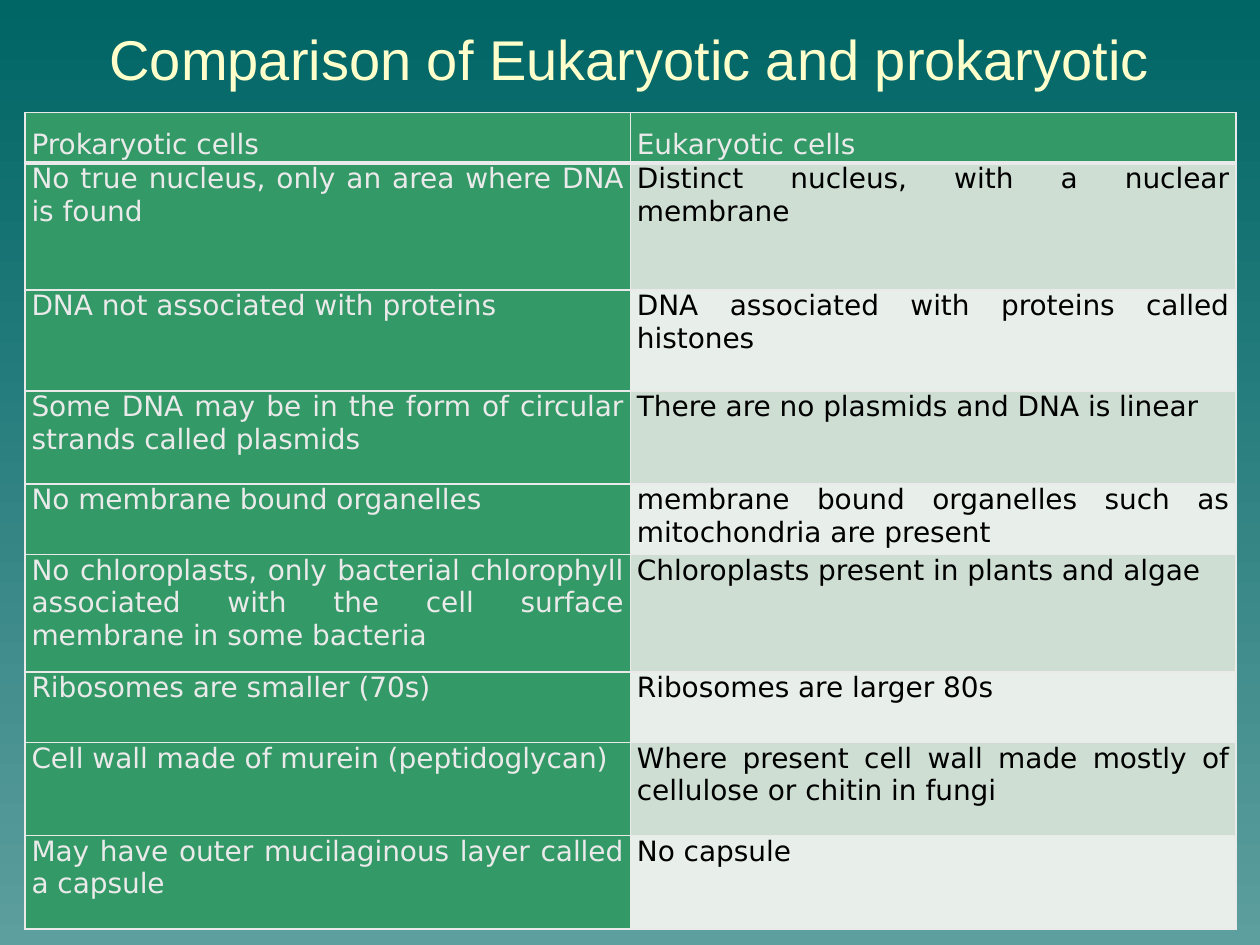
from dataclasses import dataclass

from lxml import etree
from pptx import Presentation
from pptx.dml.color import RGBColor
from pptx.enum import text
from pptx.oxml.ns import qn
from pptx.util import Emu, Inches, Pt

SLIDE_WIDTH, SLIDE_HEIGHT = Inches(10), Inches(7.5)
TITLE_ONLY = 5

TEAL_DARK = RGBColor(0x00, 0x65, 0x65)
TEAL_LIGHT = RGBColor(0x5D, 0x9E, 0x9E)
CREAM = RGBColor(0xFF, 0xFF, 0xCC)
GREEN = RGBColor(0x33, 0x99, 0x66)
BAND_DARK = RGBColor(0xCE, 0xDE, 0xD3)
BAND_LIGHT = RGBColor(0xE8, 0xEF, 0xEA)
PALE = RGBColor(0xEA, 0xEA, 0xEA)
BLACK = RGBColor(0x00, 0x00, 0x00)

HEADER_FONT = {"name": "DejaVu Sans", "size": Pt(16), "bold": False}
TITLE_FONT = {"name": "Arial", "size": Pt(32), "bold": False}


@dataclass
class Comparison:
    prokaryotic: str
    eukaryotic: str
    height: float  # inches


COMPARISONS = [
    Comparison("Prokaryotic cells", "Eukaryotic cells", 0.4),
    Comparison("No true nucleus, only an area where DNA is found",
               "Distinct nucleus, with a nuclear membrane", 1.01),
    Comparison("DNA not associated with proteins",
               "DNA associated with proteins called histones", 0.8),
    Comparison("Some DNA may be in the form of circular strands called plasmids",
               "There are no plasmids and DNA is linear", 0.74),
    Comparison("No membrane bound organelles",
               "membrane bound organelles such as mitochondria are present", 0.56),
    Comparison("No chloroplasts, only bacterial chlorophyll associated with the "
               "cell surface membrane in some bacteria",
               "Chloroplasts present in plants and algae", 0.93),
    Comparison("Ribosomes are smaller (70s)", "Ribosomes are larger 80s", 0.56),
    Comparison("Cell wall made of murein (peptidoglycan)",
               "Where present cell wall made mostly of cellulose or chitin in fungi", 0.74),
    Comparison("May have outer mucilaginous layer called a capsule", "No capsule", 0.74),
]


def across(share: float) -> Emu:
    return Emu(int(SLIDE_WIDTH * share))


def down(share: float) -> Emu:
    return Emu(int(SLIDE_HEIGHT * share))


def apply(target, values: dict) -> None:
    for name, value in values.items():
        setattr(target, name, value)


def paint_background(slide) -> None:
    fill = slide.background.fill
    fill.gradient()
    fill.gradient_angle = 270
    for stop, color in zip(fill.gradient_stops, (TEAL_DARK, TEAL_LIGHT)):
        stop.color.rgb = color


def write_title(slide, wording: str) -> None:
    title = slide.shapes.title
    apply(title, {"left": across(0.05), "top": down(0.013),
                  "width": across(0.9), "height": down(0.097)})
    frame = title.text_frame
    apply(frame, {"text": wording, "word_wrap": True,
                  "auto_size": text.MSO_AUTO_SIZE.NONE,
                  "vertical_anchor": text.MSO_ANCHOR.MIDDLE,
                  "margin_left": Inches(0.06), "margin_top": Inches(0.06),
                  "margin_right": Inches(0.1), "margin_bottom": Inches(0.06)})
    paragraph = frame.paragraphs[0]
    paragraph.alignment = text.PP_ALIGN.CENTER
    paragraph._p.get_or_add_pPr().set("marL", str(Inches(0.04)))
    font = paragraph.runs[0].font
    apply(font, TITLE_FONT)
    font.color.rgb = CREAM


def add_borders(cell, bottom_width: float) -> None:
    properties = cell._tc.get_or_add_tcPr()
    for side in "LRTB":
        width = bottom_width if side == "B" else 1
        line = etree.SubElement(properties, qn(f"a:ln{side}"), w=str(Pt(width)))
        solid = etree.SubElement(line, qn("a:solidFill"))
        etree.SubElement(solid, qn("a:srgbClr"), val=str(PALE))


def fill_cell(cell, wording: str, fill: RGBColor, ink: RGBColor, is_header: bool) -> None:
    add_borders(cell, 3 if is_header else 1)
    cell.fill.solid()
    cell.fill.fore_color.rgb = fill
    apply(cell, {"text": wording, "vertical_anchor": text.MSO_ANCHOR.TOP,
                 "margin_left": Inches(0.05), "margin_right": Inches(0.05),
                 "margin_top": 0, "margin_bottom": 0})
    paragraph = cell.text_frame.paragraphs[0]
    apply(paragraph, {"alignment": text.PP_ALIGN.JUSTIFY,
                      "line_spacing": 1.5 if is_header else 1.0})
    font = paragraph.runs[0].font
    apply(font, HEADER_FONT)
    font.color.rgb = ink


def add_comparison_table(slide, comparisons: list[Comparison]) -> None:
    height = Inches(sum(comparison.height for comparison in comparisons))
    table = slide.shapes.add_table(len(comparisons), 2, across(0.02), down(0.119),
                                   across(0.961), height).table
    for index, comparison in enumerate(comparisons):
        table.rows[index].height = Inches(comparison.height)
        is_header = index == 0
        band = BAND_DARK if index % 2 else BAND_LIGHT
        fill_cell(table.cell(index, 0), comparison.prokaryotic, GREEN, PALE, is_header)
        fill_cell(table.cell(index, 1), comparison.eukaryotic,
                  GREEN if is_header else band, PALE if is_header else BLACK, is_header)


def main() -> None:
    presentation = Presentation()
    apply(presentation, {"slide_width": SLIDE_WIDTH, "slide_height": SLIDE_HEIGHT})
    slide = presentation.slides.add_slide(presentation.slide_layouts[TITLE_ONLY])
    paint_background(slide)
    write_title(slide, "Comparison of Eukaryotic and prokaryotic")
    add_comparison_table(slide, COMPARISONS)
    presentation.save("out.pptx")


if __name__ == "__main__":
    main()
